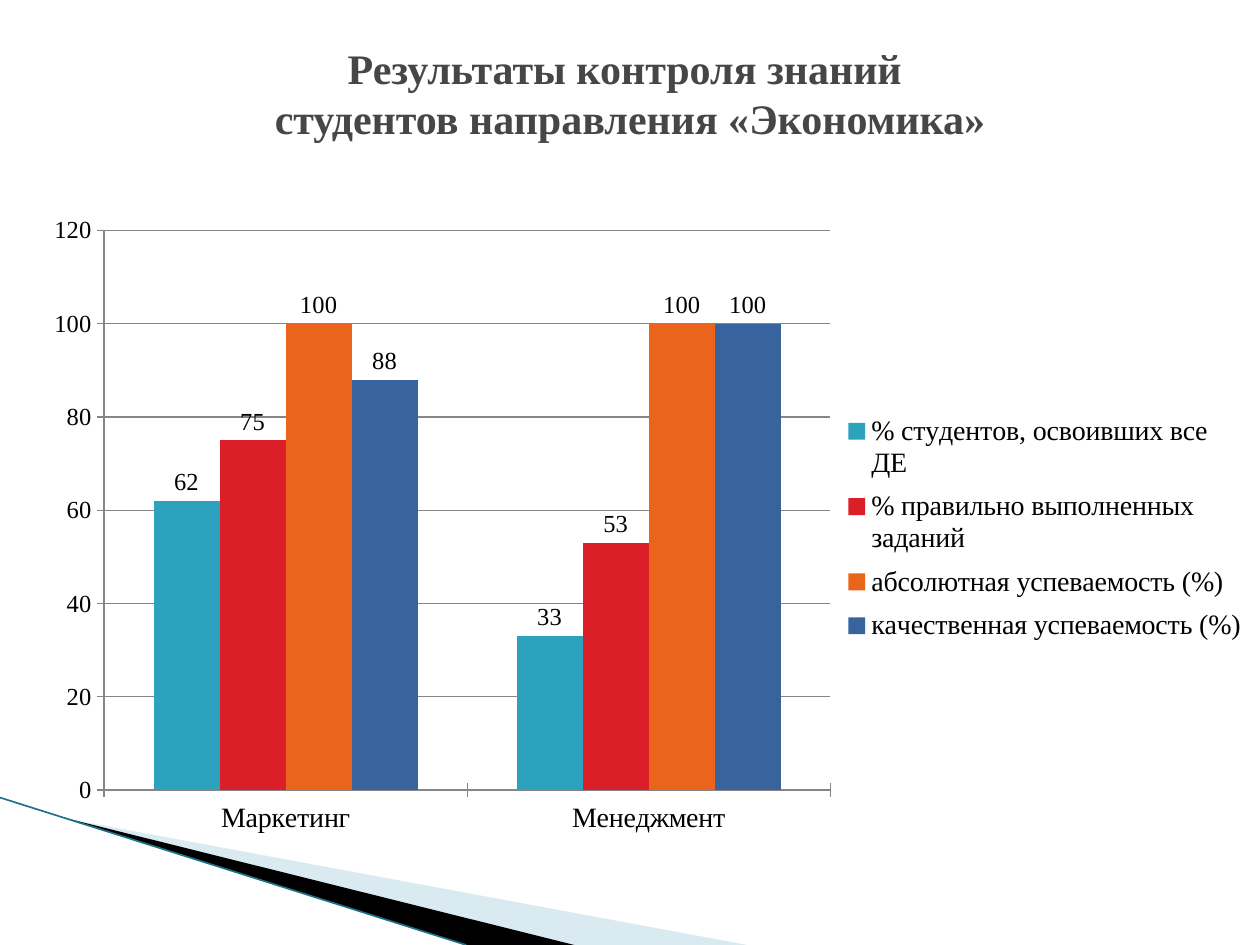
from dataclasses import dataclass

from lxml import etree
from pptx import Presentation
from pptx.chart.data import CategoryChartData
from pptx.dml.color import RGBColor
from pptx.enum.chart import XL_CHART_TYPE, XL_LABEL_POSITION, XL_LEGEND_POSITION, XL_TICK_MARK
from pptx.enum.shapes import MSO_CONNECTOR
from pptx.enum.text import MSO_ANCHOR, PP_ALIGN
from pptx.oxml.ns import qn
from pptx.util import Inches, Pt

COLUMNS = XL_CHART_TYPE.COLUMN_CLUSTERED
OUTSIDE_END = XL_LABEL_POSITION.OUTSIDE_END
LEGEND_RIGHT = XL_LEGEND_POSITION.RIGHT
TICK_CROSS = XL_TICK_MARK.CROSS
STRAIGHT = MSO_CONNECTOR.STRAIGHT
MIDDLE = MSO_ANCHOR.MIDDLE
CENTER = PP_ALIGN.CENTER

SLIDE_W, SLIDE_H = Inches(10), Inches(7.5)


@dataclass(frozen=True)
class Theme:
    font: str = "Times New Roman"
    title: str = "464646"
    text: str = "000000"
    grid: str = "868686"
    pale_wedge: str = "A0CBDC"
    dark_wedge: str = "000000"
    edge: str = "1B7488"
    title_size: int = 24
    label_size: int = 16
    value_size: int = 14


@dataclass(frozen=True)
class Box:
    x: float
    y: float
    w: float
    h: float

    def on_slide(self) -> tuple:
        return (int(self.x * SLIDE_W), int(self.y * SLIDE_H),
                int(self.w * SLIDE_W), int(self.h * SLIDE_H))


@dataclass(frozen=True)
class Wedge:
    points: tuple
    color: str
    alpha: int


@dataclass(frozen=True)
class Measure:
    name: str
    scores: tuple
    color: str


THEME = Theme()
TITLE = "Результаты контроля знаний \vстудентов направления «Экономика»"
PROGRAMMES = ("Маркетинг", "Менеджмент")
MEASURES = (
    Measure("% студентов, освоивших все ДЕ", (62, 33), "2DA2BF"),
    Measure("% правильно выполненных заданий", (75, 53), "DA1F28"),
    Measure("абсолютная успеваемость (%)", (100, 100), "EB641B"),
    Measure("качественная успеваемость (%)", (88, 100), "39639D"),
)
WEDGES = (
    Wedge(((0.055, 0.867), (0.593, 1), (0.455, 1)), THEME.pale_wedge, 40),
    Wedge(((0.053, 0.866), (0.456, 1), (0.37, 1)), THEME.dark_wedge, 100),
)
TITLE_BOX = Box(0.05, 0.02, 0.9, 0.156)
CHART_BOX = Box(0.023, 0.216, 0.977, 0.68)
PLOT_SHARE = Box(0.061, 0.041, 0.59, 0.871)
LEGEND_SHARE = Box(0.675, 0.31, 0.32, 0.39)


def rgb(color: str) -> RGBColor:
    return RGBColor.from_string(color)


def style_font(font, size: int, color: str = THEME.text, bold: bool = False) -> None:
    font.name, font.size, font.bold = THEME.font, Pt(size), bold
    font.color.rgb = rgb(color)


def draw_wedge(slide, wedge: Wedge) -> None:
    corners = [(int(x * SLIDE_W), int(y * SLIDE_H)) for x, y in wedge.points]
    builder = slide.shapes.build_freeform(*corners[0])
    builder.add_line_segments(corners[1:], close=True)
    shape = builder.convert_to_shape()
    shape.shadow.inherit = False
    shape.line.fill.background()
    shape.fill.solid()
    shape.fill.fore_color.rgb = rgb(wedge.color)
    if wedge.alpha < 100:
        color = shape.fill._xPr.find(".//" + qn("a:srgbClr"))
        etree.SubElement(color, qn("a:alpha"), val=str(wedge.alpha * 1000))


def draw_edge(slide) -> None:
    edge = slide.shapes.add_connector(
        STRAIGHT, 0, int(0.844 * SLIDE_H), int(0.37 * SLIDE_W), SLIDE_H)
    edge.line.color.rgb = rgb(THEME.edge)
    edge.line.width = Pt(0.95)
    etree.SubElement(edge._element.spPr, qn("a:effectLst"))


def draw_title(slide) -> None:
    frame = slide.shapes.add_textbox(*TITLE_BOX.on_slide()).text_frame
    frame.word_wrap = True
    frame.vertical_anchor = MIDDLE
    frame.text = TITLE
    heading = frame.paragraphs[0]
    heading.alignment = CENTER
    for run in heading.runs:
        style_font(run.font, THEME.title_size, THEME.title, True)


def place_in_chart(part, index: int, share: Box, inner: bool) -> None:
    for previous in part.findall(qn("c:layout")):
        part.remove(previous)
    layout = etree.Element(qn("c:layout"))
    manual = etree.SubElement(layout, qn("c:manualLayout"))
    settings = [("layoutTarget", "inner")] if inner else []
    settings += [("xMode", "edge"), ("yMode", "edge"),
                 ("x", share.x), ("y", share.y), ("w", share.w), ("h", share.h)]
    for tag, setting in settings:
        etree.SubElement(manual, qn(f"c:{tag}"), val=str(setting))
    part.insert(index, layout)


def style_axis(axis, size: int) -> None:
    axis.major_tick_mark = TICK_CROSS
    axis.format.line.color.rgb = rgb(THEME.grid)
    style_font(axis.tick_labels.font, size)


def draw_chart(slide) -> None:
    results = CategoryChartData()
    results.categories = PROGRAMMES
    for measure in MEASURES:
        results.add_series(measure.name, measure.scores)
    chart = slide.shapes.add_chart(COLUMNS, *CHART_BOX.on_slide(), results).chart
    chart.has_title = False
    style_font(chart.font, THEME.label_size)

    style_axis(chart.category_axis, THEME.label_size)
    scale = chart.value_axis
    style_axis(scale, THEME.value_size)
    scale.minimum_scale, scale.maximum_scale, scale.major_unit = 0, 120, 20
    scale.has_major_gridlines = True
    scale.major_gridlines.format.line.color.rgb = rgb(THEME.grid)

    chart.has_legend = True
    legend = chart.legend
    legend.position = LEGEND_RIGHT
    legend.include_in_layout = False
    style_font(legend.font, THEME.label_size)

    plot = chart.plots[0]
    plot.vary_by_categories = False
    plot.gap_width, plot.overlap = 150, 0
    for series, measure in zip(plot.series, MEASURES):
        series.format.fill.solid()
        series.format.fill.fore_color.rgb = rgb(measure.color)
        labels = series.data_labels
        labels.show_value = True
        labels.position = OUTSIDE_END
        style_font(labels.font, THEME.value_size)

    place_in_chart(chart._chartSpace.find(".//" + qn("c:plotArea")), 0, PLOT_SHARE, True)
    place_in_chart(legend._element, 1, LEGEND_SHARE, False)


def main() -> None:
    deck = Presentation()
    deck.slide_width, deck.slide_height = SLIDE_W, SLIDE_H
    slide = deck.slides.add_slide(deck.slide_layouts[6])
    for wedge in WEDGES:
        draw_wedge(slide, wedge)
    draw_edge(slide)
    draw_chart(slide)
    draw_title(slide)
    deck.save("out.pptx")


if __name__ == "__main__":
    main()
